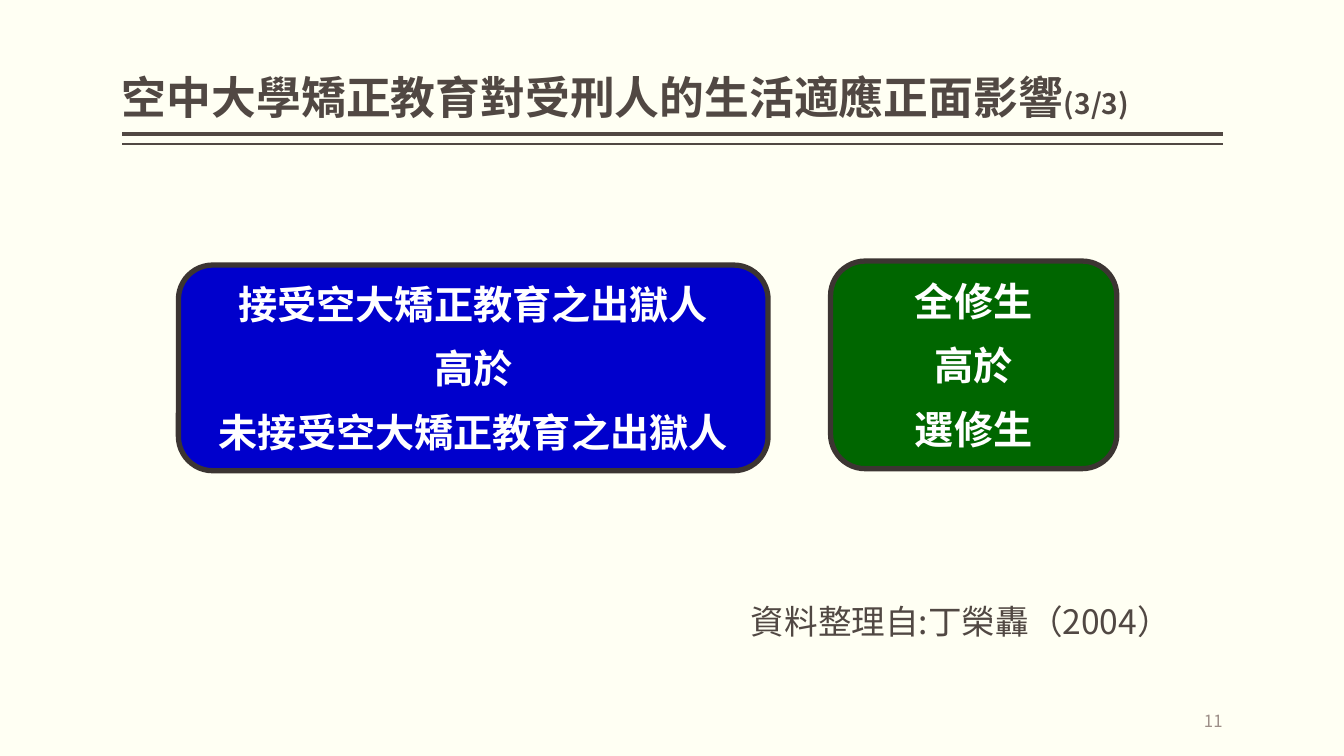
from dataclasses import dataclass

from lxml.etree import SubElement
from pptx import Presentation
from pptx.dml.color import RGBColor
from pptx.enum.shapes import MSO_CONNECTOR, MSO_SHAPE
from pptx.enum.text import MSO_ANCHOR, MSO_AUTO_SIZE, PP_ALIGN
from pptx.oxml.ns import qn
from pptx.slide import Slide
from pptx.text.text import TextFrame, _Run
from pptx.util import Pt

COLORS = {
    "background": "FFFFF3",
    "text": "514843",
    "outline": "3C3532",
    "page": "9D8F88",
    "graduates": "0000CC",
    "students": "006600",
    "white": "FFFFFF",
}
CJK_FONT = "Noto Sans CJK TC"
BOX_FONT = "Calibri"
LEFT = 87.12
RIGHT = 873.36


@dataclass
class Comparison:
    left: float
    top: float
    width: float
    height: float
    color: str
    lines: list[str]


@dataclass
class Rule:
    top: float
    weight: float


COMPARISONS = [
    Comparison(127.44, 189.36, 421.2, 146.88, "graduates",
               ["接受空大矯正教育之出獄人", "高於", "未接受空大矯正教育之出獄人"]),
    Comparison(593.28, 186.48, 204.48, 148.32, "students",
               ["全修生", "高於", "選修生"]),
]
RULES = [Rule(95.76, 3), Rule(102.96, 1)]


def rgb(name: str) -> RGBColor:
    return RGBColor.from_string(COLORS[name])


def style_run(run: _Run, font: str, size: float, color: str, bold: bool = False) -> None:
    run.font.name = font
    run.font.size = Pt(size)
    run.font.bold = bold
    run.font.color.rgb = rgb(color)
    SubElement(run.font._element, qn("a:ea"), typeface=font)


def prepare_frame(frame: TextFrame, anchor: MSO_ANCHOR) -> None:
    frame.auto_size = MSO_AUTO_SIZE.NONE
    frame.word_wrap = True
    frame.vertical_anchor = anchor
    frame.margin_left = frame.margin_right = Pt(0)
    frame.margin_top = frame.margin_bottom = Pt(3.6)


def place(shape, left: float, top: float, width: float, height: float) -> None:
    shape.left, shape.top = Pt(left), Pt(top)
    shape.width, shape.height = Pt(width), Pt(height)


def add_rule(slide: Slide, rule: Rule) -> None:
    line = slide.shapes.add_connector(
        MSO_CONNECTOR.STRAIGHT, Pt(RIGHT), Pt(rule.top), Pt(LEFT), Pt(rule.top))
    line.line.color.rgb = rgb("text")
    line.line.width = Pt(rule.weight)
    SubElement(line._element.spPr, qn("a:effectLst"))


def add_title(slide: Slide) -> None:
    title = slide.shapes.title
    place(title, LEFT, 5.76, RIGHT - LEFT, 86.4)
    prepare_frame(title.text_frame, MSO_ANCHOR.BOTTOM)
    heading = title.text_frame.paragraphs[0]
    heading.alignment = PP_ALIGN.LEFT
    heading.line_spacing = 0.9
    for words, size in (("空中大學矯正教育對受刑人的生活適應正面影響", 32), ("(3/3)", 20)):
        run = heading.add_run()
        run.text = words
        style_run(run, CJK_FONT, size, "text", bold=True)


def add_comparison(slide: Slide, item: Comparison) -> None:
    box = slide.shapes.add_shape(
        MSO_SHAPE.ROUNDED_RECTANGLE,
        Pt(item.left), Pt(item.top), Pt(item.width), Pt(item.height))
    box.shadow.inherit = False
    box.fill.solid()
    box.fill.fore_color.rgb = rgb(item.color)
    box.line.color.rgb = rgb("outline")
    box.line.width = Pt(3.78)
    box.text_frame.text = "\n".join(item.lines)
    box.text_frame.word_wrap = True
    box.text_frame.vertical_anchor = MSO_ANCHOR.MIDDLE
    for paragraph in box.text_frame.paragraphs:
        paragraph.alignment = PP_ALIGN.CENTER
        paragraph.space_before = Pt(12)
        style_run(paragraph.runs[0], BOX_FONT, 28, "white", bold=True)


def add_page_number(slide: Slide) -> None:
    page = slide.shapes.add_textbox(Pt(RIGHT - 144), Pt(500.4), Pt(144), Pt(28.8))
    prepare_frame(page.text_frame, MSO_ANCHOR.MIDDLE)
    page.text_frame.text = "11"
    number = page.text_frame.paragraphs[0]
    number.alignment = PP_ALIGN.RIGHT
    style_run(number.runs[0], CJK_FONT, 12, "page")


def add_citation(slide: Slide) -> None:
    citation = slide.placeholders[1]
    place(citation, 536.4, 429.12, 317.52, 45.36)
    prepare_frame(citation.text_frame, MSO_ANCHOR.TOP)
    citation.text_frame.text = "資料整理自:丁榮轟（2004）"
    reference = citation.text_frame.paragraphs[0]
    reference.alignment = PP_ALIGN.LEFT
    reference.line_spacing = 0.9
    reference.space_before = Pt(12)
    properties = reference._p.get_or_add_pPr()
    properties.set("marL", "0")
    properties.set("indent", "0")
    SubElement(properties, qn("a:buNone"))
    style_run(reference.runs[0], CJK_FONT, 24, "text")


def main() -> None:
    presentation = Presentation()
    presentation.slide_width, presentation.slide_height = Pt(960), Pt(540)
    slide = presentation.slides.add_slide(presentation.slide_layouts[1])
    slide.background.fill.solid()
    slide.background.fill.fore_color.rgb = rgb("background")
    for rule in RULES:
        add_rule(slide, rule)
    add_title(slide)
    for item in COMPARISONS:
        add_comparison(slide, item)
    add_page_number(slide)
    add_citation(slide)
    presentation.save("out.pptx")


if __name__ == "__main__":
    main()
